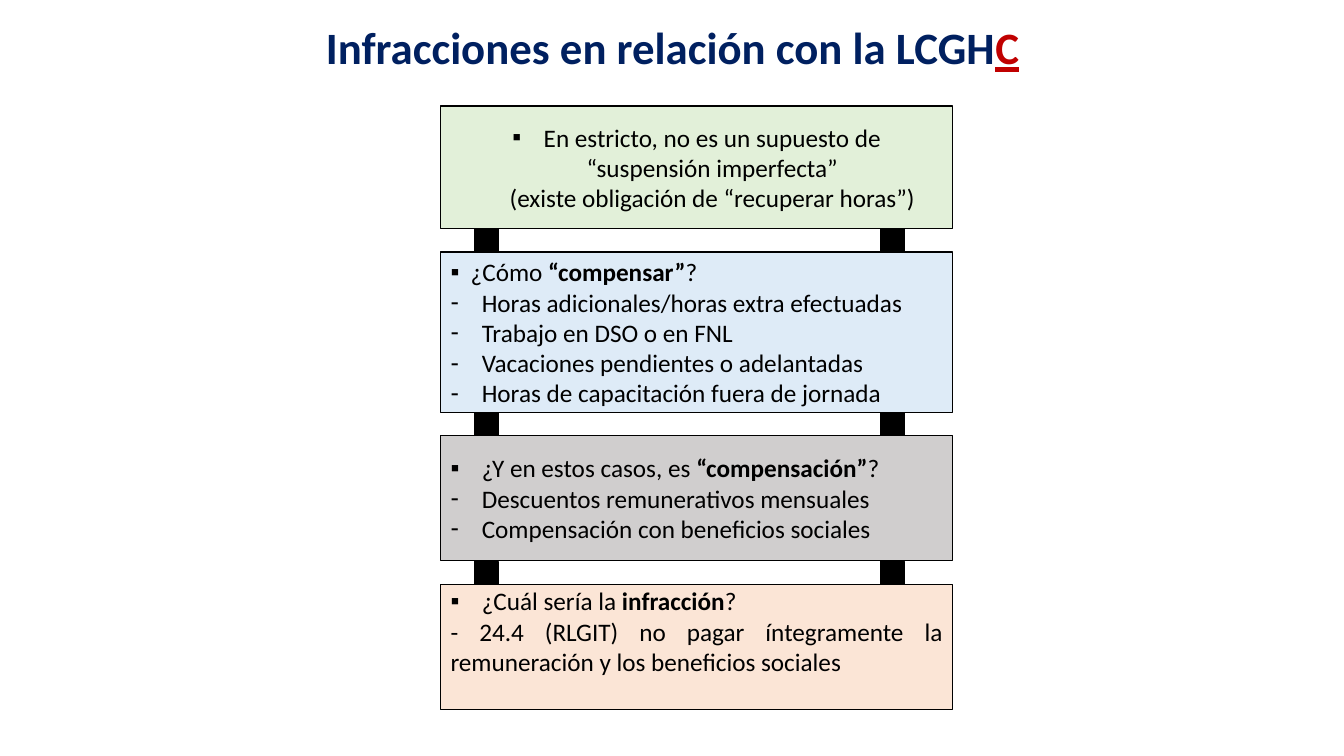
from lxml.etree import SubElement
from pptx import Presentation
from pptx.dml.color import RGBColor
from pptx.enum.shapes import MSO_SHAPE
from pptx.enum.text import MSO_ANCHOR, PP_ALIGN
from pptx.oxml.ns import qn
from pptx.util import Inches, Pt

COLORS = {
    "black": "000000", "navy": "002060", "red": "C00000",
    "green": "E2F0D9", "blue": "DEEBF7", "gray": "D0CECE", "peach": "FBE5D6",
}


def add_block(kind, left, top, width, height, color):
    sp = s.shapes.add_shape(kind, Inches(left), Inches(top), Inches(width), Inches(height))
    sp.shadow.inherit = False
    sp.fill.solid()
    sp.fill.fore_color.rgb = RGBColor.from_string(COLORS[color])
    sp.line.color.rgb = RGBColor.from_string(COLORS["black"])
    sp.line.width = Pt(1)
    return sp


def set_bullet(p, char, indent):
    pPr = p._p.get_or_add_pPr()
    pPr.set("marL", str(Inches(indent)))
    pPr.set("indent", str(-Inches(indent)))
    SubElement(pPr, qn("a:buFont")).set("typeface", "Arial")
    SubElement(pPr, qn("a:buChar")).set("char", char)


prs = Presentation()
prs.slide_width, prs.slide_height = Inches(13.33), Inches(7.5)
s = prs.slides.add_slide(prs.slide_layouts[5])

# Title
title = s.shapes.title
title.left, title.top = Inches(0.92), Inches(0.02)
title.width, title.height = Inches(11.5), Inches(1.45)
tf = title.text_frame
tf.word_wrap = True
tf.vertical_anchor = MSO_ANCHOR.TOP
tf.margin_top = Inches(0.24)
p = tf.paragraphs[0]
p.alignment = PP_ALIGN.CENTER
p.line_spacing = 0.9
for text, color in [("Infracciones en relación con la LCGH", "navy"), ("C", "red")]:
    r = p.add_run()
    r.text = text
    r.font.name, r.font.size, r.font.bold = "Calibri", Pt(32), True
    r.font.underline = color == "red"
    r.font.color.rgb = RGBColor.from_string(COLORS[color])

# Boxes: top, height, fill, anchor, alignment, paragraphs (bullet, indent, text)
# Asterisks enclose bold words
MIDDLE, JUSTIFY = MSO_ANCHOR.MIDDLE, PP_ALIGN.JUSTIFY
boxes = [
    (1.05, 1.22, "green", MIDDLE, PP_ALIGN.CENTER, [
        ("▪", 0.31, "En estricto, no es un supuesto de\n“suspensión imperfecta”\n"
                    "(existe obligación de “recuperar horas”)"),
    ]),
    (2.5, 1.59, "blue", MIDDLE, JUSTIFY, [
        ("▪", 0.2, "¿Cómo *“compensar”*?"),
        ("-", 0.31, "Horas adicionales/horas extra efectuadas"),
        ("-", 0.31, "Trabajo en DSO o en FNL"),
        ("-", 0.31, "Vacaciones pendientes o adelantadas"),
        ("-", 0.31, "Horas de capacitación fuera de jornada"),
    ]),
    (4.32, 1.24, "gray", MIDDLE, JUSTIFY, [
        ("▪", 0.31, "¿Y en estos casos, es *“compensación”*?"),
        ("-", 0.31, "Descuentos remunerativos mensuales"),
        ("-", 0.31, "Compensación con beneficios sociales"),
    ]),
    (5.8, 1.24, "peach", MSO_ANCHOR.TOP, JUSTIFY, [
        ("▪", 0.31, "¿Cuál sería la *infracción*?"),
        (None, 0, "- 24.4 (RLGIT) no pagar íntegramente la remuneración "
                  "y los beneficios sociales"),
    ]),
]
for top, height, color, anchor, alignment, items in boxes:
    tf = add_block(MSO_SHAPE.RECTANGLE, 4.37, top, 5.08, height, color).text_frame
    tf.word_wrap = True
    tf.vertical_anchor = anchor
    tf.margin_top = tf.margin_bottom = Inches(0.01)
    for i, (bullet, indent, text) in enumerate(items):
        p = tf.add_paragraph() if i else tf.paragraphs[0]
        p.alignment = alignment
        if bullet:
            set_bullet(p, bullet, indent)
        for j, line in enumerate(text.split("\n")):
            if j:
                p.add_line_break()
            for k, part in enumerate(line.split("*")):
                r = p.add_run()
                r.text = part
                r.font.name, r.font.size, r.font.bold = "Calibri", Pt(18), k % 2 == 1
                r.font.color.rgb = RGBColor.from_string(COLORS["black"])

# Posts between consecutive boxes
for top in (2.27, 4.09, 5.57):
    for left in (4.71, 8.74):
        post = add_block(MSO_SHAPE.CAN, left, top, 0.23, 0.23, "black")
        post.adjustments[0] = 0

prs.save("out.pptx")
